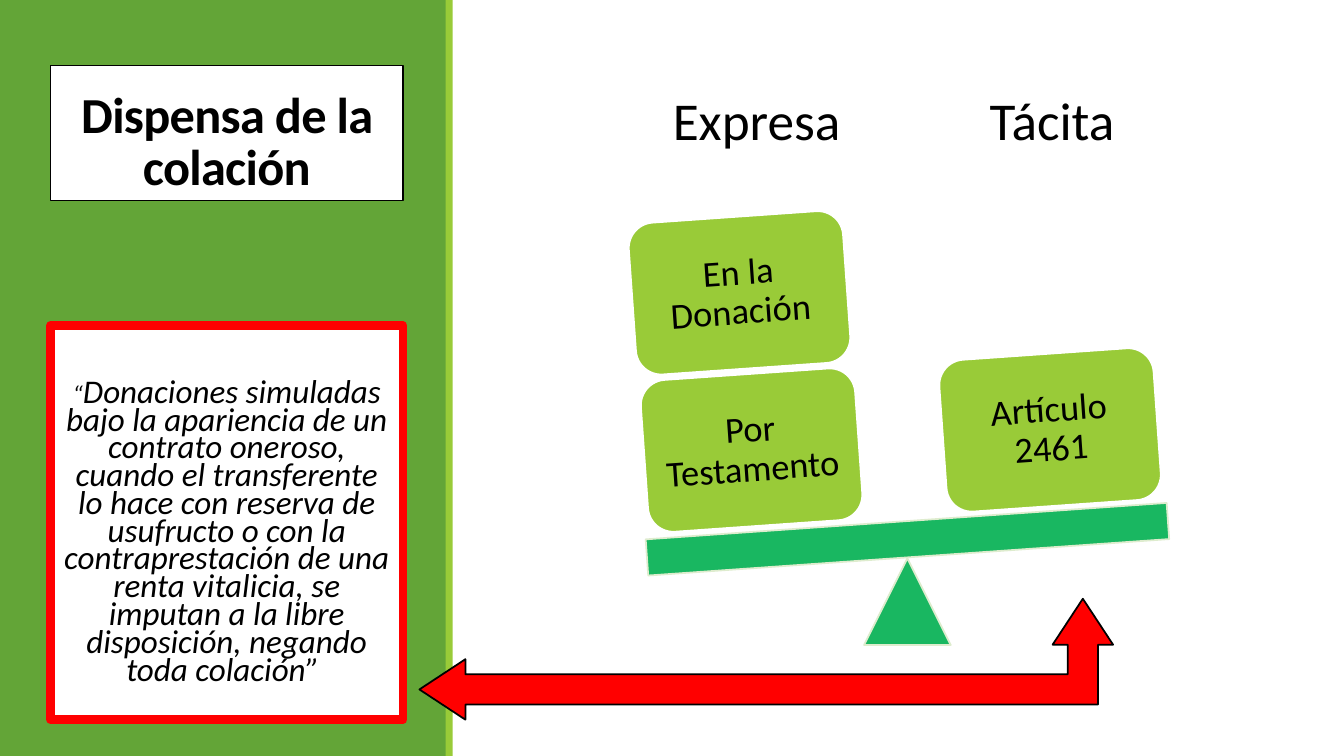
from lxml.etree import SubElement
from pptx import Presentation
from pptx.dml.color import RGBColor
from pptx.enum.shapes import MSO_SHAPE as Shape
from pptx.enum.text import MSO_ANCHOR as Anchor, PP_ALIGN as Align
from pptx.oxml.ns import qn
from pptx.util import Emu, Pt

PX = 9144  # 100 px to the inch
TILT = 356
GREEN, LIME, BALANCE = "63A537", "99CB38", "00B050"
WHITE, BLACK, RED, PALE = "FFFFFF", "000000", "FF0000", "DEECCE"

HEADINGS = [("Expresa", 647), ("Tácita ", 946)]
WEIGHTS = [("Por Testamento", 639, 371), ("En la Donación", 627, 215), ("Artículo 2461", 935, 351)]
QUOTE = (
    "Donaciones simuladas bajo la apariencia de un contrato oneroso, cuando el "
    "transferente lo hace con reserva de usufructo o con la contraprestación de una "
    "renta vitalicia, se imputan a la libre disposición, negando toda colación” "
)


def px(length):
    return Emu(length * PX)


def paint(color_format, color, opacity=100):
    color_format.rgb = RGBColor.from_string(color)
    if opacity < 100:
        for rgb in color_format._xFill.iter(qn("a:srgbClr")):
            SubElement(rgb, qn("a:alpha"), val=str(opacity * 1000))


def add_block(slide, kind, box, fill, line=None, width=1.25, opacity=100, rotation=0, adjustments=()):
    shape = slide.shapes.add_shape(kind, *map(px, box))
    shape.shadow.inherit = False
    shape.rotation = rotation
    for index, value in enumerate(adjustments):
        shape.adjustments[index] = value
    shape.fill.solid()
    paint(shape.fill.fore_color, fill, opacity)
    if line:
        shape.line.width = Pt(width)
        shape.line.fill.solid()
        paint(shape.line.color, line)
    else:
        shape.line.fill.background()
    return shape


def format_run(run, size, bold=False, italic=False):
    font = run.font
    font.name, font.size, font.bold, font.italic = "Calibri", Pt(size), bold, italic
    paint(font_color(font), BLACK)


def font_color(font):
    font.fill.solid()
    return font.fill.fore_color


def write(shape, text, size, spacing=0.9, anchor=Anchor.MIDDLE, margins=(10, 5, 10, 5), **style):
    """Fill the shape with one centred paragraph and return it."""
    frame = shape.text_frame
    frame.word_wrap = True
    frame.vertical_anchor = anchor
    (frame.margin_left, frame.margin_top,
     frame.margin_right, frame.margin_bottom) = map(px, margins)
    frame.text = text
    paragraph = frame.paragraphs[0]
    paragraph.alignment = Align.CENTER
    paragraph.line_spacing = spacing
    format_run(paragraph.runs[0], size, **style)
    return paragraph


def add_side_panel(slide):
    add_block(slide, Shape.RECTANGLE, (0, 0, 443, 750), GREEN)
    add_block(slide, Shape.RECTANGLE, (442, 0, 7, 750), LIME)
    title = add_block(slide, Shape.RECTANGLE, (50, 65, 350, 134), WHITE, BLACK)
    paragraph = write(title, "Dispensa de la colación", 36, 0.85, Anchor.BOTTOM, bold=True)
    paragraph.runs[0].font._element.set("spc", "-50")


def add_balance(slide):
    for text, left in HEADINGS:
        heading = add_block(slide, Shape.ROUNDED_RECTANGLE, (left, 65, 207, 115), WHITE,
                            opacity=90, adjustments=[0.1])
        write(heading, text, 38, margins=[16] * 4)
    add_block(slide, Shape.ISOSCELES_TRIANGLE, (857, 554, 86, 86), BALANCE, PALE, opacity=90)
    add_block(slide, Shape.RECTANGLE, (641, 517, 518, 36), BALANCE, PALE, opacity=90, rotation=TILT)
    for text, left, top in WEIGHTS:
        weight = add_block(slide, Shape.ROUNDED_RECTANGLE, (left, top, 213, 151), LIME, WHITE,
                           rotation=TILT)
        write(weight, text, 26, margins=[11] * 4)


def add_quote(slide):
    box = add_block(slide, Shape.RECTANGLE, (50, 323, 350, 391), WHITE, RED, 6)
    paragraph = write(box, "“", 17.6, 0.7, Anchor.TOP, (10, 55, 10, 5), italic=True)
    run = paragraph.add_run()
    run.text = QUOTE
    format_run(run, 23.6, italic=True)


def main():
    presentation = Presentation()
    presentation.slide_width, presentation.slide_height = px(1333), px(750)
    slide = presentation.slides.add_slide(presentation.slide_layouts[6])
    add_side_panel(slide)
    add_balance(slide)
    add_quote(slide)
    add_block(slide, Shape.LEFT_UP_ARROW, (416, 594, 688, 120), RED, BLACK,
              adjustments=(0.25, 0.25, 0.38))
    presentation.save("out.pptx")


if __name__ == "__main__":
    main()
